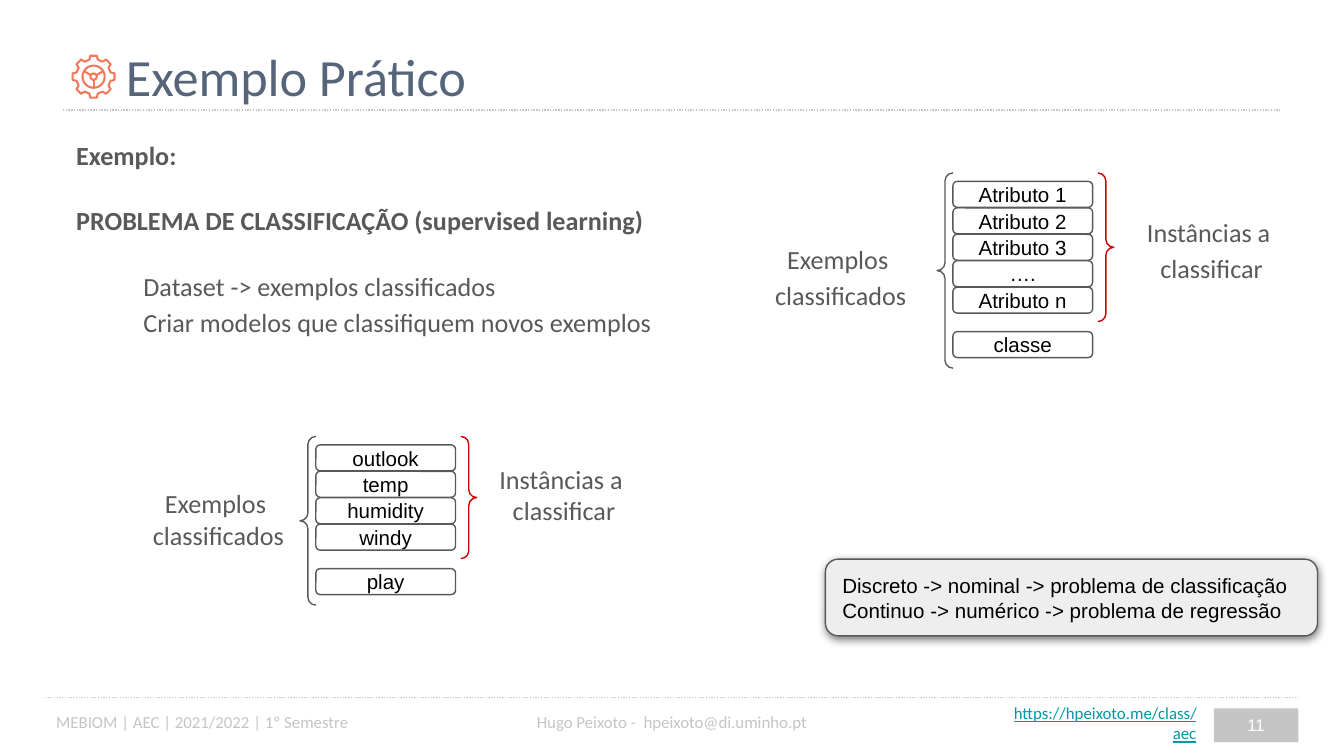
from math import cos, radians, sin

from lxml.etree import SubElement
from pptx import Presentation
from pptx.dml.color import RGBColor
from pptx.enum.dml import MSO_LINE
from pptx.enum.shapes import MSO_CONNECTOR, MSO_SHAPE
from pptx.enum.text import MSO_ANCHOR, MSO_AUTO_SIZE, PP_ALIGN
from pptx.oxml.ns import qn
from pptx.util import Cm, Pt

COLORS = {
    "text": "595959",
    "title": "566579",
    "muted": "C6C5C5",
    "link": "0097A7",
    "panel": "EEEEEE",
    "accent": "CC0000",
    "icon": "EE795B",
    "black": "000000",
    "white": "FFFFFF",
}
INSET = Cm(0.25)
ROW_WIDTH, ROW_HEIGHT, ROW_PITCH, CLASS_GAP = 2.64, 0.49, 0.5, 0.84
BRACE_WIDTH, BRACE_MARGIN = 0.3, 0.16


def color(name):
    return RGBColor.from_string(COLORS[name])


def write(paragraph, text, font="Calibri", size=14, ink="text", bold=False,
          underline=False, align=PP_ALIGN.LEFT, spacing=1.0, before=0,
          margin=0, indent=0):
    paragraph.text = text
    paragraph.alignment = align
    paragraph.line_spacing = spacing
    paragraph.space_before = Pt(before)
    properties = paragraph._p.get_or_add_pPr()
    properties.set("marL", str(Cm(margin)))
    properties.set("indent", str(Cm(indent)))
    for span in paragraph.runs:
        span.font.name = font
        span.font.size = Pt(size)
        span.font.bold = bold
        span.font.underline = underline
        span.font.color.rgb = color(ink)


class SlideBuilder:
    def __init__(self, page):
        self.page = page
        self.shapes = page.shapes

    def frame(self, box, anchor, top=INSET):
        frame = box.text_frame
        frame.word_wrap = True
        frame.auto_size = MSO_AUTO_SIZE.NONE
        frame.vertical_anchor = anchor
        frame.margin_left = frame.margin_right = frame.margin_bottom = INSET
        frame.margin_top = top
        return frame

    def title(self, text, left, top, width, height, **style):
        box = self.shapes.title
        box.left, box.top, box.width, box.height = map(Cm, (left, top, width, height))
        write(self.frame(box, MSO_ANCHOR.TOP).paragraphs[0], text, **style)

    def text(self, lines, left, top, width, height, anchor=MSO_ANCHOR.TOP,
             inset_top=INSET, **style):
        box = self.shapes.add_textbox(Cm(left), Cm(top), Cm(width), Cm(height))
        self.fill_lines(self.frame(box, anchor, inset_top), lines, **style)

    def fill_lines(self, frame, lines, **style):
        for index, (text, extra) in enumerate(lines):
            paragraph = frame.add_paragraph() if index else frame.paragraphs[0]
            write(paragraph, text, **{**style, **extra})

    def finish(self, box, fill=None, line=None, weight=0.75):
        box.shadow.inherit = False
        if fill:
            box.fill.solid()
            box.fill.fore_color.rgb = color(fill)
        else:
            box.fill.background()
        if line:
            box.line.color.rgb = color(line)
            box.line.width = Pt(weight)
        else:
            box.line.fill.background()

    def shape(self, kind, left, top, width, height, parent=None, lines=(),
              fill=None, line=None, weight=0.75, **style):
        shapes = parent.shapes if parent else self.shapes
        box = shapes.add_shape(kind, Cm(left), Cm(top), Cm(width), Cm(height))
        self.finish(box, fill, line, weight)
        if lines:
            self.fill_lines(self.frame(box, MSO_ANCHOR.MIDDLE), lines, **style)
        return box

    def line(self, x1, y1, x2, y2, ink="muted", weight=0.75, dash=None, parent=None):
        shapes = parent.shapes if parent else self.shapes
        line = shapes.add_connector(MSO_CONNECTOR.STRAIGHT, Cm(x1), Cm(y1), Cm(x2), Cm(y2))
        line.line.color.rgb = color(ink)
        line.line.width = Pt(weight)
        if dash:
            line.line.dash_style = dash
        SubElement(line._element.spPr, qn("a:effectLst"))

    def drop_shadow(self, box):
        effects = box._element.spPr.find(qn("a:effectLst"))
        shadow = SubElement(effects, qn("a:outerShdw"), blurRad=str(Pt(4.5)),
                            dist=str(Pt(1.5)), dir="5400000", algn="bl", rotWithShape="0")
        tint = SubElement(shadow, qn("a:srgbClr"), val=COLORS["black"])
        SubElement(tint, qn("a:alpha"), val="50000")

    def brace(self, kind, left, top, bottom, ink):
        brace = self.shape(kind, left, top, BRACE_WIDTH, bottom - top, line=ink)
        brace.adjustments[0] = 0.5

    def attribute_stack(self, left, top, attributes, target):
        group = self.shapes.add_group_shape()
        tops = [top + index * ROW_PITCH for index in range(len(attributes))]
        class_top = tops[-1] + CLASS_GAP
        for name, row_top in zip(attributes + [target], tops + [class_top]):
            self.shape(MSO_SHAPE.ROUNDED_RECTANGLE, left, row_top, ROW_WIDTH, ROW_HEIGHT,
                       parent=group, lines=[(name, {})], line="text", font="Arial",
                       size=11, ink="black", align=PP_ALIGN.CENTER)
        start = top - BRACE_MARGIN
        self.brace(MSO_SHAPE.LEFT_BRACE, left - BRACE_WIDTH, start,
                   class_top + ROW_HEIGHT + 0.2, "text")
        self.brace(MSO_SHAPE.RIGHT_BRACE, left + ROW_WIDTH + 0.1, start,
                   tops[-1] + ROW_HEIGHT + BRACE_MARGIN, "accent")

    def gear_icon(self, x, y, weight=1.1):
        def polar(radius, angle):
            return x + radius * cos(radians(angle)), y + radius * sin(radians(angle))

        group = self.shapes.add_group_shape()
        tooth = [(0.33, -14), (0.4, -9), (0.4, 9), (0.33, 14)]
        points = [tuple(map(Cm, polar(radius, turn + offset)))
                  for turn in range(0, 360, 45) for radius, offset in tooth]
        outline = group.shapes.build_freeform(*points[0])
        outline.add_line_segments(points[1:], close=True)
        self.finish(outline.convert_to_shape(), line="icon", weight=weight)
        for radius in (0.21, 0.06):
            self.shape(MSO_SHAPE.OVAL, x - radius, y - radius, 2 * radius, 2 * radius,
                       parent=group, line="icon", weight=weight)
        for angle in (90, 210, 330):
            self.line(*polar(0.06, angle), *polar(0.21, angle), ink="icon",
                      weight=weight, parent=group)


def main():
    deck = Presentation()
    deck.slide_width, deck.slide_height = Cm(25.4), Cm(14.29)
    builder = SlideBuilder(deck.slides.add_slide(deck.slide_layouts[5]))

    builder.title("Exemplo Prático", 0.86, 0.58, 23.67, 1.3, size=28, ink="title", indent=1.27)
    builder.line(1.19, 2.08, 24.21, 2.08, dash=MSO_LINE.ROUND_DOT)
    builder.line(0.86, 13.18, 24.54, 13.18, dash=MSO_LINE.ROUND_DOT)
    builder.gear_icon(1.77, 1.45)

    footers = [
        ("Hugo Peixoto -  hpeixoto@di.uminho.pt", 0.86, 13.18, 23.67, 1.09,
         {"align": PP_ALIGN.CENTER}),
        ("https://hpeixoto.me/class/aec", 18.59, 13.16, 4.27, 1.17,
         {"align": PP_ALIGN.RIGHT, "ink": "link", "underline": True}),
        ("MEBIOM | AEC | 2021/2022 | 1º Semestre", 0.81, 13.18, 6.02, 1.09, {}),
    ]
    for text, left, top, width, height, style in footers:
        builder.text([(text, style)], left, top, width, height, anchor=MSO_ANCHOR.MIDDLE,
                     inset_top=Cm(0.1), size=9, ink="muted")
    builder.shape(MSO_SHAPE.RECTANGLE, 22.94, 13.39, 1.6, 0.64, lines=[("11", {})],
                  fill="muted", font="Arial", size=9, ink="white", align=PP_ALIGN.CENTER)

    builder.text([
        ("Exemplo:", {"bold": True}),
        ("PROBLEMA DE CLASSIFICAÇÃO (supervised learning)", {"bold": True, "before": 16}),
        ("Dataset -> exemplos classificados", {"margin": 1.27, "before": 16}),
        ("Criar modelos que classifiquem novos exemplos", {"indent": 1.27}),
    ], 1.19, 2.29, 23.01, 10.44, spacing=1.15)

    callout = builder.shape(MSO_SHAPE.ROUNDED_RECTANGLE, 15.6, 10.57, 9.3, 1.45, lines=[
        ("Discreto -> nominal -> problema de classificação", {}),
        ("Continuo -> numérico -> problema de regressão", {}),
    ], fill="panel", line="text", font="Arial", size=11, ink="black")
    builder.drop_shadow(callout)

    builder.attribute_stack(18.01, 3.43, ["Atributo 1", "Atributo 2", "Atributo 3", "….",
                                          "Atributo n"], "classe")
    builder.attribute_stack(5.97, 8.41, ["outlook", "temp", "humidity", "windy"], "play")

    known, unseen = "Exemplos \vclassificados", "Instâncias a \vclassificar"
    labels = [(known, 14.25, 4.27, 1.15), (unseen, 21.26, 3.76, 1.15),
              (known, 2.49, 8.97, 1.0), (unseen, 9.02, 8.51, 1.0)]
    for text, left, top, spacing in labels:
        builder.text([(text, {})], left, top, 3.28, 1.8, align=PP_ALIGN.CENTER, spacing=spacing)

    deck.save("out.pptx")


if __name__ == "__main__":
    main()
